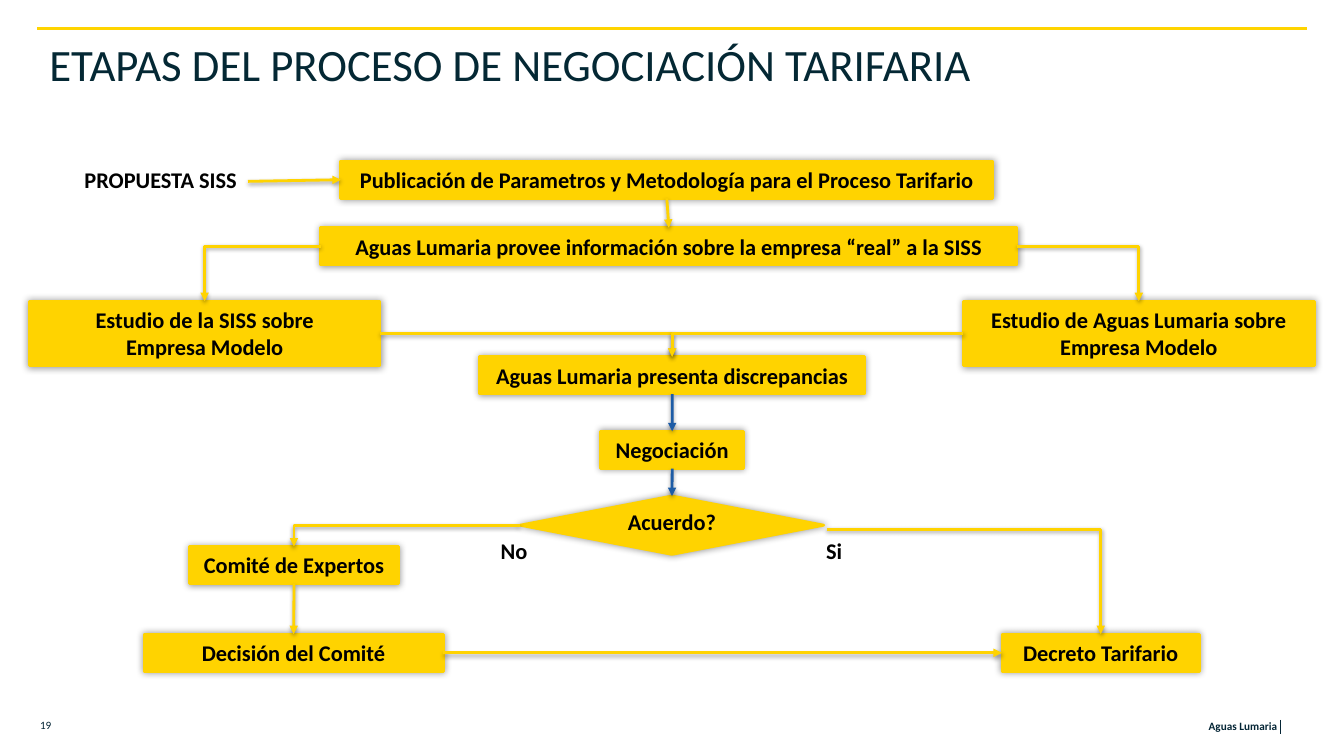
from lxml.etree import SubElement
from pptx import Presentation
from pptx.dml.color import RGBColor
from pptx.enum.shapes import MSO_CONNECTOR as Link, MSO_SHAPE as Shape
from pptx.enum.text import MSO_ANCHOR as Anchor, MSO_AUTO_SIZE as AutoSize, PP_ALIGN as Align
from pptx.oxml.ns import qn
from pptx.util import Cm, Pt

YELLOW = RGBColor(0xFF, 0xD3, 0x00)
RULE = RGBColor(0xFF, 0xD4, 0x00)
BLUE = RGBColor(0x1D, 0x5C, 0xA6)
NAVY = RGBColor(0x04, 0x28, 0x34)
FOOTER = RGBColor(0x04, 0x25, 0x35)
BLACK = RGBColor(0x00, 0x00, 0x00)

TOP, LEFT, BOTTOM, RIGHT = range(4)
ROW = 0.94
BOX_SHADOW = {"blurRad": 63500, "dist": 0, "dir": 0, "alpha": 40000}
ARROW_SHADOW = {"blurRad": 40000, "dist": 20000, "dir": 5400000, "alpha": 38000}


def write(frame, text, size=16, color=BLACK, bold=True, align=Align.LEFT,
          anchor=Anchor.TOP, wrap=True, spacing=None):
    """Fill a text frame, one paragraph per line of text."""
    frame.auto_size = AutoSize.NONE
    frame.word_wrap = wrap
    frame.vertical_anchor = anchor
    for index, line in enumerate(text.split("\n")):
        para = frame.paragraphs[0] if index == 0 else frame.add_paragraph()
        para.alignment = align
        if spacing:
            para.line_spacing = spacing
        span = para.add_run()
        span.text = line
        span.font.name = "Calibri"
        span.font.size = Pt(size)
        span.font.bold = bold
        span.font.color.rgb = color


def set_shadow(shape, blurRad, dist, dir, alpha):
    props = shape._element.spPr
    effects = props.find(qn("a:effectLst"))
    if effects is None:
        effects = SubElement(props, qn("a:effectLst"))
    shadow = SubElement(effects, qn("a:outerShdw"), blurRad=str(blurRad),
                        dist=str(dist), dir=str(dir), rotWithShape="0")
    tint = SubElement(shadow, qn("a:srgbClr"), val="000000")
    SubElement(tint, qn("a:alpha"), val=str(alpha))


def side(shape, index):
    """Middle of one side of a shape."""
    center = shape.left + shape.width // 2
    middle = shape.top + shape.height // 2
    return [(center, shape.top), (shape.left, middle),
            (center, shape.top + shape.height),
            (shape.left + shape.width, middle)][index]


class FlowPage:
    def __init__(self, deck):
        self.page = deck.slides.add_slide(deck.slide_layouts[5])
        self.shapes = self.page.shapes

    def title(self, text, x, y, width, height):
        box = self.shapes.title
        box.left, box.top, box.width, box.height = map(Cm, (x, y, width, height))
        write(box.text_frame, text, size=32, color=NAVY, bold=False)

    def label(self, text, x, y, width, height=ROW, **style):
        box = self.shapes.add_textbox(*map(Cm, (x, y, width, height)))
        write(box.text_frame, text, **style)

    def step(self, text, x, y, width, height=ROW, kind=Shape.RECTANGLE, **style):
        box = self.shapes.add_shape(kind, *map(Cm, (x, y, width, height)))
        box.fill.solid()
        box.fill.fore_color.rgb = YELLOW
        box.line.color.rgb = YELLOW
        box.line.width = Pt(2)
        box.shadow.inherit = False
        set_shadow(box, **BOX_SHADOW)
        write(box.text_frame, text, align=Align.CENTER, **style)
        return box

    def line(self, start, end, color, width=2, kind=Link.STRAIGHT):
        line = self.shapes.add_connector(kind, *start, *end)
        line.line.color.rgb = color
        line.line.width = Pt(width)
        SubElement(line._element.spPr, qn("a:effectLst"))
        return line

    def arrow(self, start, end, color=YELLOW, kind=Link.STRAIGHT):
        arrow = self.line(start, end, color, kind=kind)
        SubElement(arrow.line._get_or_add_ln(), qn("a:tailEnd"), type="triangle")
        set_shadow(arrow, **ARROW_SHADOW)
        return arrow

    def join(self, first, first_side, last, last_side, color=YELLOW):
        arrow = self.arrow(side(first, first_side), side(last, last_side), color)
        arrow.begin_connect(first, first_side)
        arrow.end_connect(last, last_side)

    def elbow(self, start, target):
        """Run sideways, then down to the top of the target."""
        arrow = self.arrow(start, side(target, TOP), kind=Link.ELBOW)
        arrow._element.spPr.find(qn("a:prstGeom")).set("prst", "bentConnector2")


def main():
    deck = Presentation()
    deck.slide_width, deck.slide_height = Cm(33.87), Cm(19.05)
    flow = FlowPage(deck)

    # Frame, title and footer
    flow.line((Cm(0.94), Cm(0.71)), (Cm(32.94), Cm(0.71)), RULE)
    flow.line((Cm(32.26), Cm(18.14)), (Cm(32.26), Cm(18.49)), FOOTER, 0.5)
    flow.title("ETAPAS DEL PROCESO DE NEGOCIACIÓN TARIFARIA", 0.99, 0.79, 31.93, 1.83)
    small = {"size": 8, "color": FOOTER, "anchor": Anchor.MIDDLE}
    flow.label("Aguas Lumaria", 26.72, 17.91, 5.72, 0.76, align=Align.RIGHT, **small)
    flow.label("19", 0.76, 17.88, 5.72, 0.76, bold=False, **small)

    # Steps
    siss_study = flow.step("Estudio de la SISS sobre\nEmpresa Modelo", 0.74, 7.59, 8.84, 1.63)
    firm_study = flow.step("Estudio de Aguas Lumaria sobre\nEmpresa Modelo",
                           24.28, 7.59, 8.84, 1.63)
    dispute = flow.step("Aguas Lumaria presenta discrepancias", 12.09, 8.99, 9.7)
    talks = flow.step("Negociación", 15.14, 10.87, 3.6)
    decree = flow.step("Decreto Tarifario", 25.25, 15.98, 4.98)
    experts = flow.step("Comité de Expertos", 4.78, 13.77, 5.26)
    agreement = flow.step("Acuerdo?", 13.11, 12.5, 7.65, 1.47,
                          kind=Shape.DIAMOND, spacing=0.7)
    publication = flow.step("Publicación de Parametros y Metodología para el Proceso Tarifario",
                            8.59, 4.06, 16.43)
    data = flow.step("Aguas Lumaria provee información sobre la empresa “real” a la SISS",
                     8.08, 5.74, 17.55)
    ruling = flow.step("Decisión del Comité", 3.63, 15.98, 7.54)

    # Free labels
    flow.label("Si", 20.57, 13.41, 0.91, wrap=False)
    flow.label("No", 12.37, 13.41, 1.19, wrap=False)
    flow.label("PROPUESTA SISS", 1.88, 4.06, 4.42, wrap=False)

    # Elbow arrows
    flow.elbow(side(data, LEFT), siss_study)
    flow.elbow(side(data, RIGHT), firm_study)
    flow.elbow(side(siss_study, RIGHT), dispute)
    flow.elbow(side(firm_study, LEFT), dispute)
    flow.elbow((Cm(20.83), Cm(13.34)), decree)
    flow.elbow(side(agreement, LEFT), experts)

    # Straight arrows
    flow.join(experts, BOTTOM, ruling, TOP)
    flow.join(dispute, BOTTOM, talks, TOP, BLUE)
    flow.join(publication, BOTTOM, data, TOP)
    flow.join(talks, BOTTOM, agreement, TOP, BLUE)
    flow.join(ruling, RIGHT, decree, LEFT)
    proposal = flow.arrow((Cm(6.25), Cm(4.57)), side(publication, LEFT))
    proposal.end_connect(publication, LEFT)

    deck.save("out.pptx")


if __name__ == "__main__":
    main()
